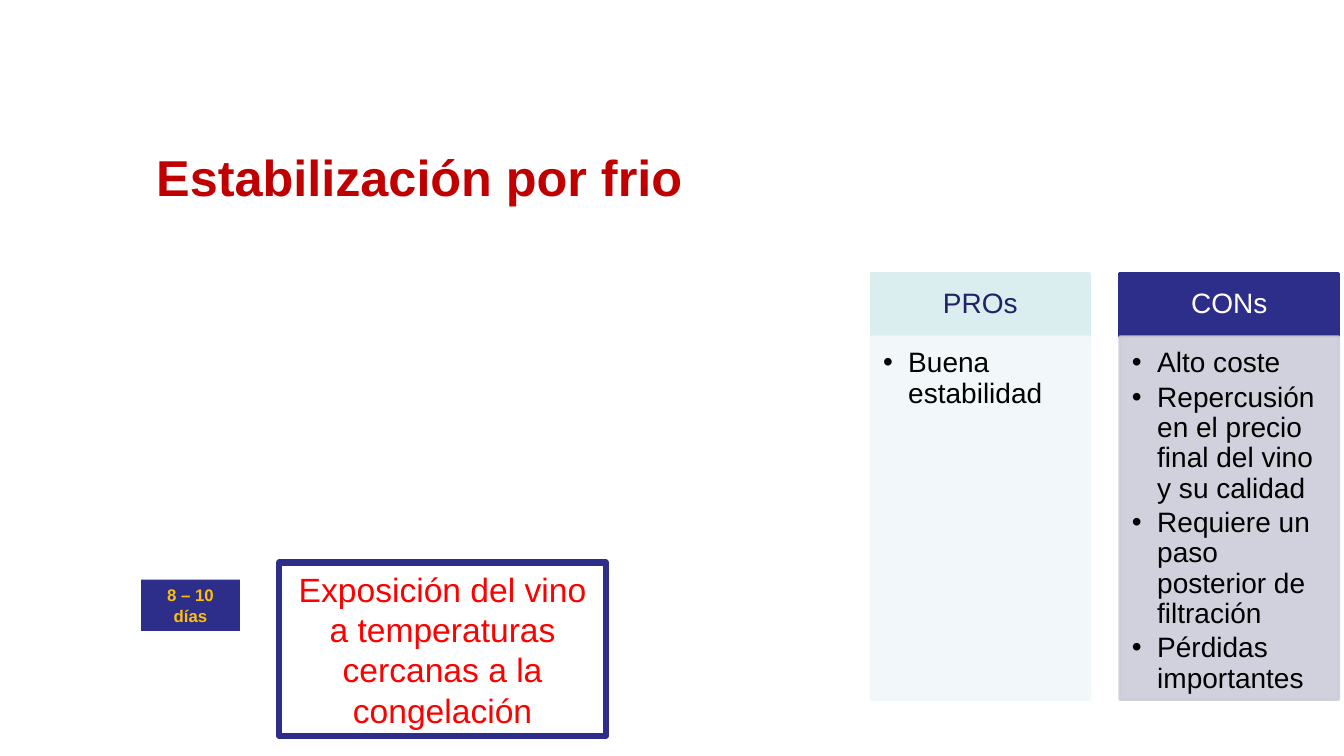
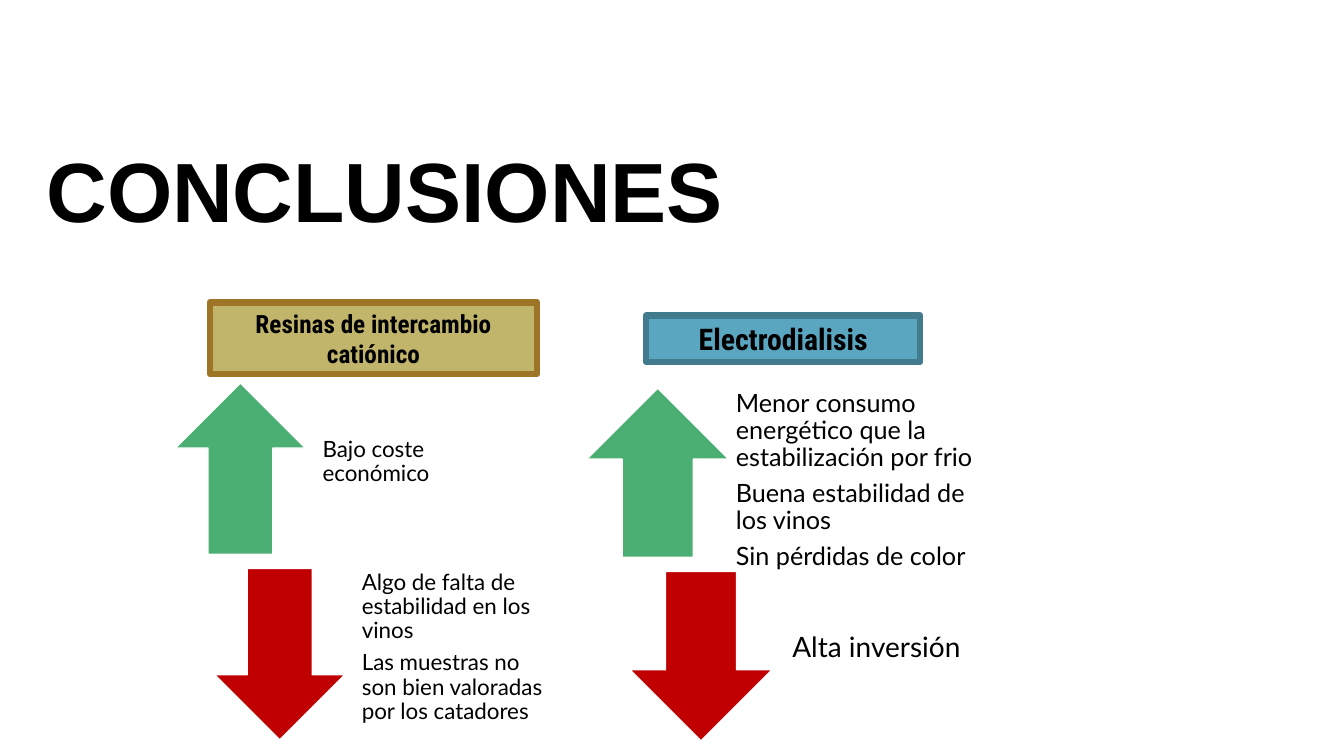
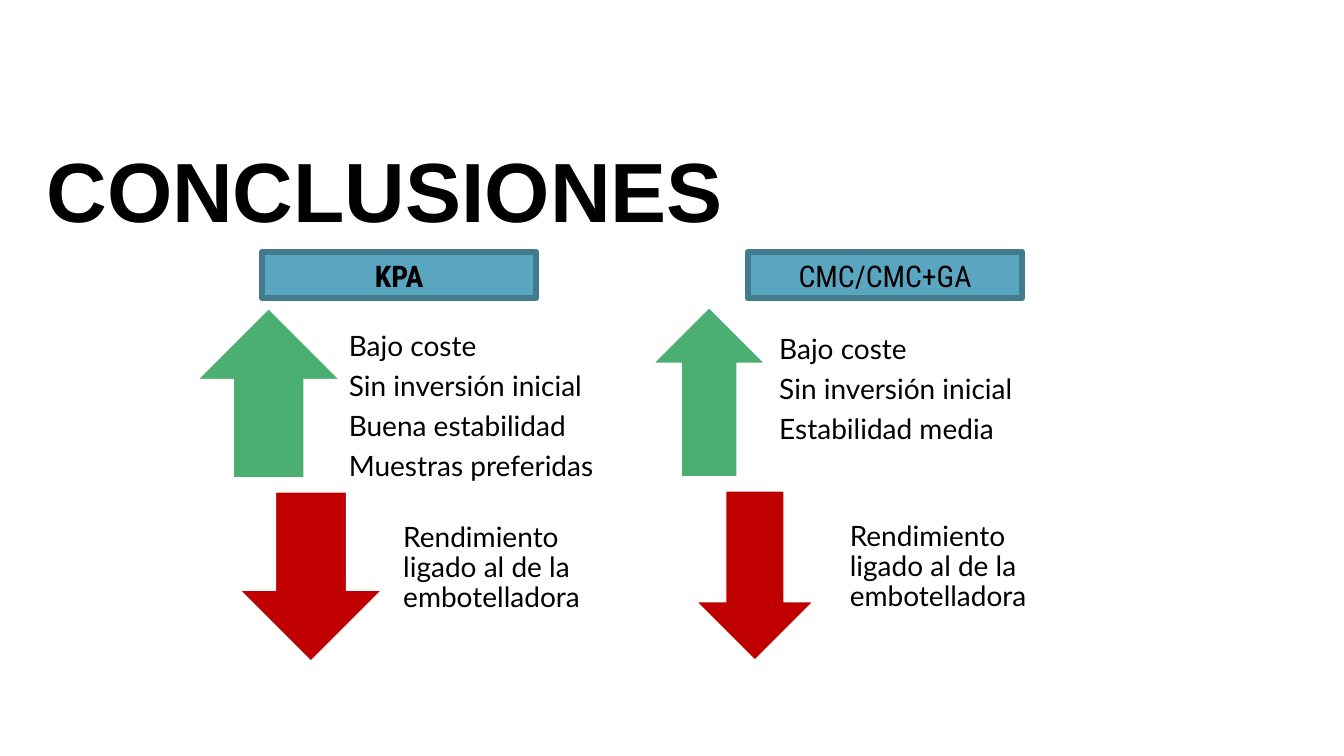
from lxml.etree import SubElement
from pptx import Presentation
from pptx.dml.color import RGBColor
from pptx.enum.shapes import MSO_SHAPE
from pptx.enum.text import MSO_ANCHOR, MSO_AUTO_SIZE, PP_ALIGN
from pptx.oxml.ns import qn
from pptx.util import Inches, Pt

COLORS = {
    "black": "000000", "white": "FFFFFF", "title red": "C00000", "red": "FF0000",
    "navy": "2D2D8A", "dark navy": "222267", "amber": "FFC000",
    "ice": "DAEDEF", "pale ice": "F1F8F9", "lavender": "CDCDDA",
    "green": "4BAF73", "ochre": "C1B56B", "brown": "9E7427",
    "blue": "5AA6C0", "steel": "437B8E",
}
CELL = 0.1


def grid(*cells):
    """Turn grid columns and rows, a tenth of an inch each, into lengths."""
    return [Inches(round(cell * CELL, 3)) for cell in cells]


def color(name):
    """Look up a named colour."""
    return RGBColor.from_string(COLORS[name])


def write_text(frame, lines, font="Arial", size=20, ink="black", bold=False,
               align=PP_ALIGN.LEFT, anchor=MSO_ANCHOR.MIDDLE,
               insets=(1, 0.5, 1, 0.5), spacing=1.0, after=0, bullet=None):
    """Fill a text frame with formatted paragraphs."""
    frame.word_wrap = True
    frame.auto_size = MSO_AUTO_SIZE.NONE
    frame.vertical_anchor = anchor
    (frame.margin_left, frame.margin_top,
     frame.margin_right, frame.margin_bottom) = grid(*insets)
    for index, line in enumerate(lines):
        para = frame.add_paragraph() if index else frame.paragraphs[0]
        properties = para._p.get_or_add_pPr()
        indent = Inches(0.25) if bullet else 0
        properties.set("marL", str(indent))
        properties.set("indent", str(-indent))
        if bullet:
            SubElement(properties, qn("a:buChar")).set("char", bullet)
        else:
            SubElement(properties, qn("a:buNone"))
        para.alignment = align
        para.line_spacing = spacing
        para.space_before = Pt(0)
        para.space_after = Pt(round(size * after, 2))
        span = para.add_run()
        span.text = line
        span.font.name = font
        span.font.size = Pt(size)
        span.font.bold = bold
        span.font.color.rgb = color(ink)


def paint(box, fill=None, line=None, width=1, alpha=100):
    """Set the fill and outline of a box."""
    for part, name in ((box.fill, fill), (box.line.fill, line)):
        if name is None:
            part.background()
            continue
        part.solid()
        part.fore_color.rgb = color(name)
    if line:
        box.line.width = Pt(width)
    if alpha < 100:
        for tint in box._element.spPr.iter(qn("a:srgbClr")):
            SubElement(tint, qn("a:alpha")).set("val", str(alpha * 1000))


class Deck:
    """Holds the shared style and the current slide."""

    def __init__(self):
        """Start a wide presentation."""
        self.file = Presentation()
        self.file.slide_width, self.file.slide_height = grid(133.33, 75)

    def add_page(self, title, place, **style):
        """Add a slide with a bold title and four body placeholders to fill."""
        self.page = self.file.slides.add_slide(self.file.slide_layouts[4])
        head, *bodies = self.page.placeholders
        self.bodies = iter(bodies)
        head.left, head.top, head.width, head.height = grid(*place)
        write_text(head.text_frame, [title], bold=True, insets=[1.3] * 4, **style)

    def body(self, lines, place, **style):
        """Place the next body placeholder and write its paragraphs."""
        box = next(self.bodies)
        box.left, box.top, box.width, box.height = grid(*place)
        write_text(box.text_frame, lines, spacing=0.9, **style)
        return box

    def shape(self, kind, place, **look):
        """Draw a preset shape without shadow."""
        box = self.page.shapes.add_shape(kind, *grid(*place))
        box.shadow.inherit = False
        paint(box, **look)
        return box

    def label(self, text, place, fill=None, line=None, **style):
        """Draw a rectangle with centred text."""
        box = self.shape(MSO_SHAPE.RECTANGLE, place, fill=fill, line=line, width=4.5)
        write_text(box.text_frame, [text], align=PP_ALIGN.CENTER, **style)

    def card(self, heading, points, left, ink, fill, tint):
        """Build a heading over a tinted bullet list."""
        top, width, head_height, list_height = 27.1, 21.7, 6.3, 36
        head = self.body([heading], (left, top, width, head_height), ink=ink,
                         align=PP_ALIGN.CENTER, insets=(1.6, 0.9, 1.6, 0.9), after=0.35)
        paint(head, fill=fill, line=fill, width=2)
        panel = self.body(points, (left, top + head_height, width, list_height),
                          anchor=MSO_ANCHOR.TOP, insets=(1.2, 1.2, 1.6, 1.7),
                          after=0.15, bullet="•")
        paint(panel, fill=tint, line=tint, width=2, alpha=90)

    def verdict(self, kind, fill, arrow, points, place, size=20):
        """Draw an arrow with its list of arguments."""
        self.shape(kind, arrow, fill=fill, line="white")
        inset = round(size * 0.08, 1)
        self.body(points, place, font="Lato", size=size,
                  insets=(inset, 0, inset, inset), after=0.35)

    def advantages(self, *content, **style):
        """Draw a green upward verdict."""
        self.verdict(MSO_SHAPE.UP_ARROW, "green", *content, **style)

    def drawbacks(self, *content, **style):
        """Draw a red downward verdict."""
        self.verdict(MSO_SHAPE.DOWN_ARROW, "title red", *content, **style)

    def add_conclusions(self):
        """Add a slide with the conclusions title."""
        self.add_page("CONCLUSIONES", (3.3, 10.3, 89.9, 16.9), size=60)

    def method(self, text, left, top, bold=True):
        """Draw the blue label of a method."""
        self.label(text, (left, top, 27.2, 4.6), fill="blue", line="steel",
                   font="Roboto Condensed", size=21.3, bold=bold)


def cold_page(deck):
    """Build the slide on cold stabilisation."""
    deck.add_page("Estabilización por frio", (14.2, 0, 67.9, 35.8),
                  size=36, ink="title red", spacing=0.9)
    cards = [
        ("PROs", ["Buena estabilidad"], "dark navy", "ice", "pale ice"),
        ("CONs", ["Alto coste",
                  "Repercusión en el precio final del vino y su calidad",
                  "Requiere un paso posterior de filtración",
                  "Pérdidas importantes"], "white", "navy", "lavender"),
    ]
    for index, (heading, points, *look) in enumerate(cards):
        deck.card(heading, points, 86.4 + index * 24.7, *look)
    deck.label("Exposición del vino a temperaturas cercanas a la congelación",
               (27.7, 55.8, 32.4, 17.2), line="navy", size=24, ink="red")
    deck.label("8 – 10 días", (14, 57.5, 9.8, 5.1), fill="navy",
               size=12, ink="amber", bold=True)


def resin_page(deck):
    """Build the conclusions on resins and electrodialysis."""
    deck.add_conclusions()
    deck.advantages((17.4, 38, 12.9, 17), ["Bajo coste económico"],
                    (30.7, 38, 21.9, 17), size=16)
    deck.drawbacks((21.3, 56.4, 12.9, 17),
                   ["Algo de falta de estabilidad en los vinos",
                    "Las muestras no son bien valoradas por los catadores"],
                   (34.6, 56.4, 21.9, 17), size=16)
    deck.advantages((58.2, 38.5, 14.1, 16.8),
                    ["Menor consumo energético que la estabilización por frio",
                     "Buena estabilidad de los vinos", "Sin pérdidas de color"],
                    (71.6, 39.8, 28.7, 17.2), size=18)
    deck.drawbacks((62.5, 56.7, 14.1, 16.8), ["Alta inversión"],
                   (77, 56.7, 24, 16.8))
    deck.label("Resinas de intercambio catiónico", (20.8, 30, 32.5, 7.1),
               fill="ochre", line="brown", font="Roboto Condensed", size=18, bold=True)
    deck.method("Electrodialisis", 64.1, 31.3)


def additive_page(deck):
    """Build the conclusions on additives."""
    deck.add_conclusions()
    common = ["Bajo coste", "Sin inversión inicial"]
    yield_limit = ["Rendimiento ligado al de la embotelladora"]
    deck.advantages((19.6, 30.6, 14.1, 16.8),
                    common + ["Buena estabilidad", "Muestras preferidas"],
                    (33, 32.6, 28.7, 17.2))
    deck.drawbacks((23.8, 48.8, 14.1, 16.8), yield_limit, (38.4, 48.8, 24, 16.8))
    deck.advantages((64.8, 30.5, 11.1, 16.8), common + ["Estabilidad media"],
                    (75.7, 31.1, 32.9, 16.8))
    deck.drawbacks((69.1, 48.7, 11.6, 16.8), yield_limit, (82.7, 48.7, 25, 16.8))
    deck.method("KPA", 26, 25)
    deck.method("CMC/CMC+GA", 74.2, 25, bold=False)


def main():
    """Build and save the presentation."""
    deck = Deck()
    for build in (cold_page, resin_page, additive_page):
        build(deck)
    deck.file.save("out.pptx")


if __name__ == "__main__":
    main()
